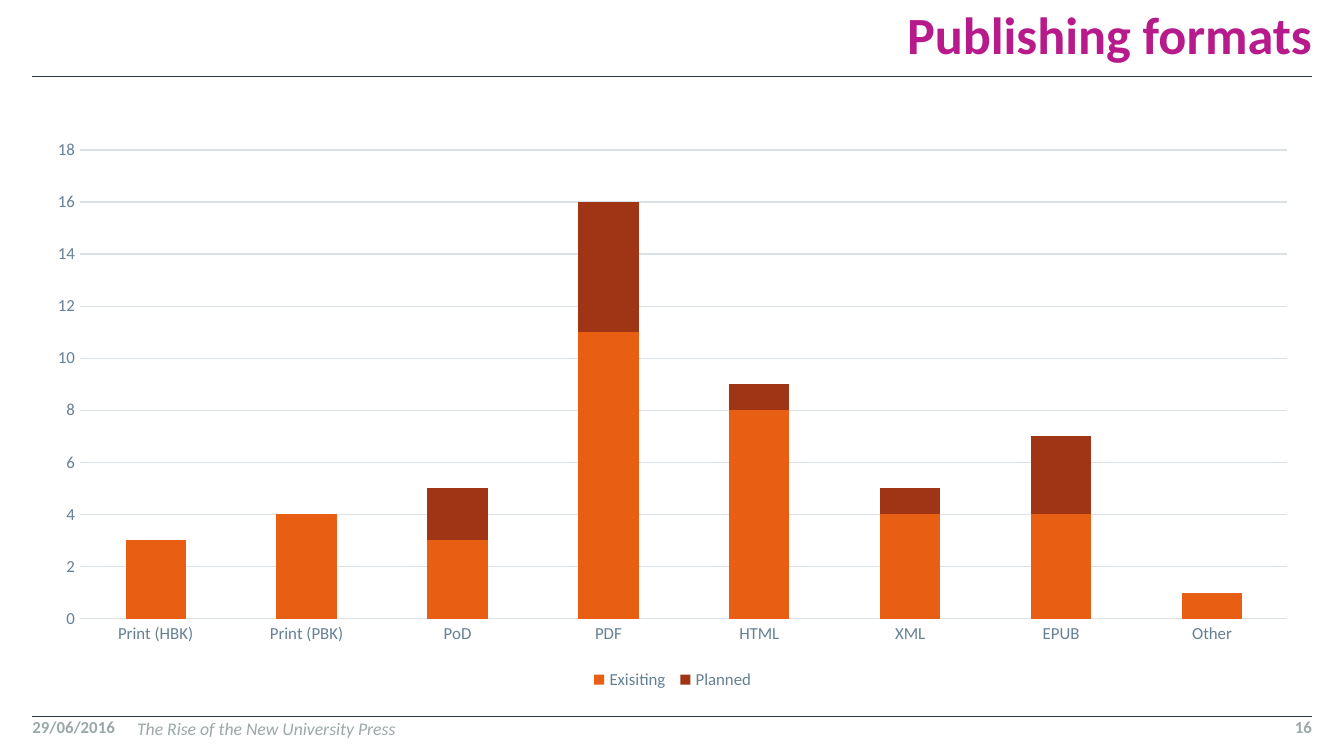
import pptx
import pptx.chart.data
import pptx.dml.color
import pptx.enum.chart
import pptx.enum.shapes
import pptx.enum.text
import pptx.oxml
import pptx.oxml.ns
import pptx.util
from dataclasses import dataclass

Inches = pptx.util.Inches
Pt = pptx.util.Pt
RGB = pptx.dml.color.RGBColor.from_string
ALIGN = pptx.enum.text.PP_ALIGN
ANCHOR = pptx.enum.text.MSO_ANCHOR
XL = pptx.enum.chart


@dataclass
class Theme:
    font: str = "Calibri"
    title: str = "B71A8B"
    footer: str = "9BA7A8"
    rule: str = "2C3841"
    label: str = "658095"
    grid: str = "DBE2E7"
    bars: tuple = ("E85E12", "9F3515")
    title_size: float = 28
    footer_size: float = 9
    name_size: float = 9.5
    chart_size: float = 10
    label_size: float = 9


theme = Theme()
W = 10
H = W * 9 / 16
MARGIN = 0.24
RIGHT = W - MARGIN
HEAD_Y, FOOT_Y = 0.57, 5.33
FOOT_H, SIDE_W = 0.18, 0.79
TITLE_X, NAME_X = 3.03, 1.02

TITLE = "Publishing formats"
DATE, NAME, NUMBER = "29/06/2016", "The Rise of the New University Press", "16"
FORMATS = ["Print (HBK)", "Print (PBK)", "PoD", "PDF", "HTML", "XML", "EPUB", "Other"]
SERIES = {
    "Exisiting ": [3, 4, 3, 11, 8, 4, 4, 1],
    "Planned": [None, None, 2, 5, 1, 1, 3, None],
}


def style(font, size, color, bold=False, italic=False):
    font.name, font.size = theme.font, Pt(size)
    font.bold, font.italic = bold, italic
    font.color.rgb = RGB(color)


def add_text(s, text, x, y, w, h, size, color, align=ALIGN.LEFT,
             anchor=ANCHOR.TOP, top=0, spacing=None, **look):
    tf = s.shapes.add_textbox(Inches(x), Inches(y), Inches(w), Inches(h)).text_frame
    tf.word_wrap = True
    tf.vertical_anchor = anchor
    tf.margin_left = tf.margin_right = tf.margin_bottom = 0
    tf.margin_top = Inches(top)
    p = tf.paragraphs[0]
    p.text, p.alignment = text, align
    if spacing:
        p.line_spacing = spacing
    style(p.font, size, color, **look)


def add_rule(s, y):
    rule = s.shapes.add_connector(pptx.enum.shapes.MSO_CONNECTOR.STRAIGHT,
                                  Inches(MARGIN), Inches(y), Inches(RIGHT), Inches(y))
    rule.line.color.rgb, rule.line.width = RGB(theme.rule), Pt(0.5)
    rule._element.spPr.append(pptx.oxml.parse_xml(
        f"<a:effectLst {pptx.oxml.ns.nsdecls('a')}/>"))


def add_formats_chart(s):
    data = pptx.chart.data.CategoryChartData()
    data.categories = FORMATS
    for name, values in SERIES.items():
        data.add_series(name, values)
    chart = s.shapes.add_chart(XL.XL_CHART_TYPE.COLUMN_STACKED, Inches(MARGIN),
                               Inches(0.96), Inches(9.53), Inches(4.21), data).chart
    style(chart.font, theme.chart_size, theme.rule)
    chart.has_title = False
    chart.has_legend = True
    chart.legend.position = XL.XL_LEGEND_POSITION.BOTTOM
    chart.legend.include_in_layout = False
    style(chart.legend.font, theme.label_size, theme.label)

    plot = chart.plots[0]
    plot.gap_width, plot.overlap, plot.vary_by_categories = 150, 100, False
    for series, color in zip(plot.series, theme.bars):
        series.format.fill.solid()
        series.format.fill.fore_color.rgb = RGB(color)

    cat, val = chart.category_axis, chart.value_axis
    for axis in (cat, val):
        axis.major_tick_mark = axis.minor_tick_mark = XL.XL_TICK_MARK.NONE
        style(axis.tick_labels.font, theme.label_size, theme.label)
    val.minimum_scale, val.maximum_scale, val.major_unit = 0, 18, 2
    val.has_major_gridlines = True
    val.format.line.fill.background()
    for line in (cat.format.line, val.major_gridlines.format.line):
        line.color.rgb, line.width = RGB(theme.grid), Pt(0.75)


def main():
    prs = pptx.Presentation()
    prs.slide_width, prs.slide_height = Inches(W), Inches(H)
    s = prs.slides.add_slide(prs.slide_layouts[6])
    for y in (HEAD_Y, FOOT_Y):
        add_rule(s, y)
    add_text(s, TITLE, TITLE_X, 0, RIGHT - TITLE_X, 0.49, theme.title_size, theme.title,
             ALIGN.RIGHT, ANCHOR.BOTTOM, spacing=0.9, bold=True)
    add_text(s, DATE, MARGIN, FOOT_Y, SIDE_W, FOOT_H,
             theme.footer_size, theme.footer, bold=True)
    add_text(s, NAME, NAME_X, FOOT_Y, 7.95, FOOT_H,
             theme.name_size, theme.footer, top=0.01, italic=True)
    add_text(s, NUMBER, RIGHT - SIDE_W, FOOT_Y, SIDE_W, FOOT_H,
             theme.footer_size, theme.footer, ALIGN.RIGHT, bold=True)
    add_formats_chart(s)
    prs.save("out.pptx")


if __name__ == "__main__":
    main()
